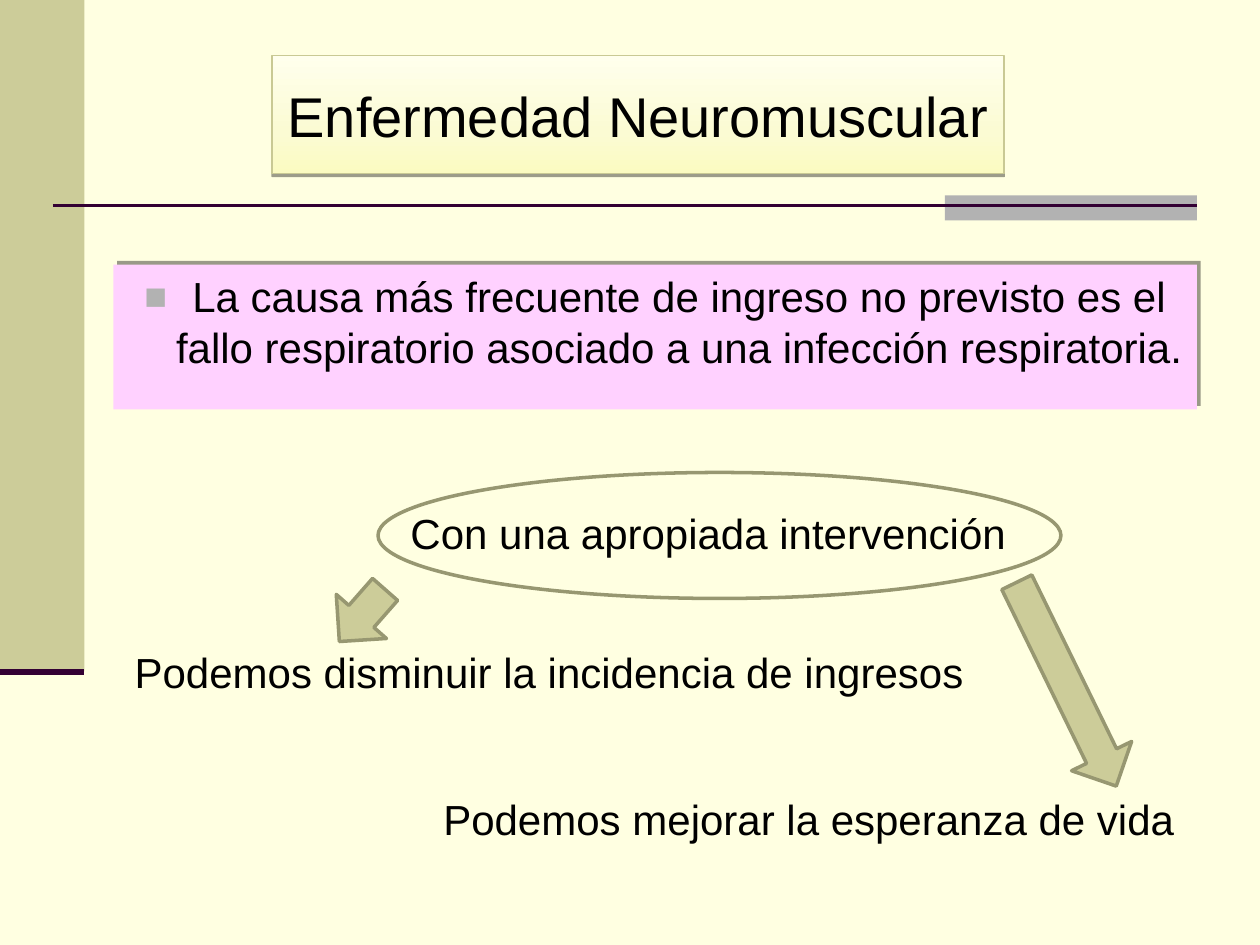
import pptx
import pptx.util
import pptx.dml.color
import pptx.enum.shapes
import pptx.enum.text
import pptx.oxml.ns
from lxml import etree

Inches, Pt = pptx.util.Inches, pptx.util.Pt
SHAPES = pptx.enum.shapes.MSO_SHAPE
ALIGN = pptx.enum.text.PP_ALIGN
ANCHOR = pptx.enum.text.MSO_ANCHOR
qn = pptx.oxml.ns.qn

COLORS = {
    "background": "FFFFE1", "olive": "CCCC99", "olive_dark": "979771",
    "gray": "B2B2B2", "plum": "330033", "title_line": "C9C994",
    "pink": "FFD1FF", "black": "000000",
}
TITLE_GRADIENT = [(0, "FFFFED"), (65, "FBFBD3"), (100, "FBFBC1")]

TITLE = "Enfermedad Neuromuscular"
CAUSE = ("La causa más frecuente de ingreso no previsto es el fallo respiratorio "
         "asociado a una infección respiratoria.")
# text, (left, top, width, height)
STATEMENTS = [
    ("Con una apropiada intervención", (3.16, 3.98, 4.97, 0.51)),
    ("Podemos disminuir la incidencia de ingresos", (0.97, 5.08, 6.84, 0.51)),
    ("Podemos mejorar la esperanza de vida", (3.42, 6.25, 6.06, 0.51)),
]
SIDEBAR = (0, 0, 0.67, 5.33)
ACCENT = (7.5, 1.55, 2, 0.2)
# start, end, width in points
RULES = [((0.42, 1.63), (9.5, 1.63), 1.5), ((0, 5.33), (0.67, 5.33), 3.5)]
ELLIPSE = (3, 3.75, 5.42, 1)
# box, rotation
ARROWS = [((2.61, 4.61, 0.53, 0.55), 41.3), ((8.2, 4.53, 0.53, 1.8), 334)]


def rgb(name):
    return pptx.dml.color.RGBColor.from_string(COLORS[name])


def add_element(parent, tag, **attributes):
    return etree.SubElement(parent, qn(tag), {k: str(v) for k, v in attributes.items()})


def add_shape(slide, kind, box, fill=None, line=None, width=0.75, rotation=0):
    shape = slide.shapes.add_shape(kind, *map(Inches, box))
    shape.shadow.inherit = False
    shape.rotation = rotation
    if fill:
        shape.fill.solid()
        shape.fill.fore_color.rgb = rgb(fill)
    else:
        shape.fill.background()
    if line:
        shape.line.color.rgb = rgb(line)
        shape.line.width = Pt(width)
    else:
        shape.line.fill.background()
    return shape


def add_rule(slide, start, end, width):
    rule = slide.shapes.add_connector(
        pptx.enum.shapes.MSO_CONNECTOR.STRAIGHT, *map(Inches, start + end))
    rule.line.color.rgb = rgb("plum")
    rule.line.width = Pt(width)
    add_element(rule._element.spPr, "a:effectLst")


def set_shadow(shape, opacity, distance, angle):
    effects = shape._element.spPr.find(qn("a:effectLst"))
    shadow = add_element(effects, "a:outerShdw", blurRad=0, dist=Pt(distance),
                         dir=angle * 60000, algn="ctr", rotWithShape=0)
    color = add_element(shadow, "a:srgbClr", val=COLORS["black"])
    add_element(color, "a:alpha", val=opacity * 1000)


def set_vertical_gradient(shape, stops):
    shape.fill.gradient()
    gradient = shape._element.spPr.find(qn("a:gradFill"))
    for child in list(gradient):
        gradient.remove(child)
    stop_list = add_element(gradient, "a:gsLst")
    for position, color in stops:
        stop = add_element(stop_list, "a:gs", pos=position * 1000)
        add_element(stop, "a:srgbClr", val=color)
    add_element(gradient, "a:lin", ang=90 * 60000, scaled=0)


def set_text(shape, text, size, align=ALIGN.LEFT, **frame_format):
    frame = shape.text_frame
    for name, value in frame_format.items():
        setattr(frame, name, value)
    paragraph = frame.paragraphs[0]
    paragraph.alignment = align
    run = paragraph.add_run()
    run.text = text
    for name, value in {"name": "Arial", "size": Pt(size)}.items():
        setattr(run.font, name, value)
    run.font.color.rgb = rgb("black")
    return paragraph


def set_bullet(paragraph):
    properties = paragraph._p.get_or_add_pPr()
    properties.set("marL", str(Inches(0.38)))
    properties.set("indent", str(Inches(-0.38)))
    color = add_element(properties, "a:buClr")
    add_element(color, "a:srgbClr", val=COLORS["gray"])
    add_element(properties, "a:buSzPct", val=90000)
    add_element(properties, "a:buFont", typeface="Arial")
    add_element(properties, "a:buChar", char="■")


def main():
    presentation = pptx.Presentation()
    presentation.slide_width, presentation.slide_height = Inches(10), Inches(7.5)
    slide = presentation.slides.add_slide(presentation.slide_layouts[6])
    slide.background.fill.solid()
    slide.background.fill.fore_color.rgb = rgb("background")

    add_shape(slide, SHAPES.RECTANGLE, SIDEBAR, "olive")
    add_shape(slide, SHAPES.RECTANGLE, ACCENT, "gray")
    for rule in RULES:
        add_rule(slide, *rule)

    title = add_shape(slide, SHAPES.RECTANGLE, (2.16, 0.44, 5.81, 0.94), line="title_line")
    set_vertical_gradient(title, TITLE_GRADIENT)
    set_shadow(title, 38, 1.6, 90)
    set_text(title, TITLE, 32, ALIGN.CENTER,
             vertical_anchor=ANCHOR.MIDDLE, word_wrap=False)

    cause = add_shape(slide, SHAPES.RECTANGLE, (0.9, 2.1, 8.6, 1.15), "pink")
    set_shadow(cause, 40, 3, 315)
    paragraph = set_text(cause, CAUSE, 24, ALIGN.CENTER,
                         vertical_anchor=ANCHOR.TOP, word_wrap=True)
    paragraph.space_before = Pt(4.8)
    set_bullet(paragraph)

    for text, box in STATEMENTS:
        set_text(slide.shapes.add_textbox(*map(Inches, box)), text, 24, word_wrap=False)

    add_shape(slide, SHAPES.OVAL, ELLIPSE, line="olive_dark", width=2)
    for box, rotation in ARROWS:
        add_shape(slide, SHAPES.DOWN_ARROW, box, "olive", "olive_dark", 2, rotation)

    presentation.save("out.pptx")


if __name__ == "__main__":
    main()
